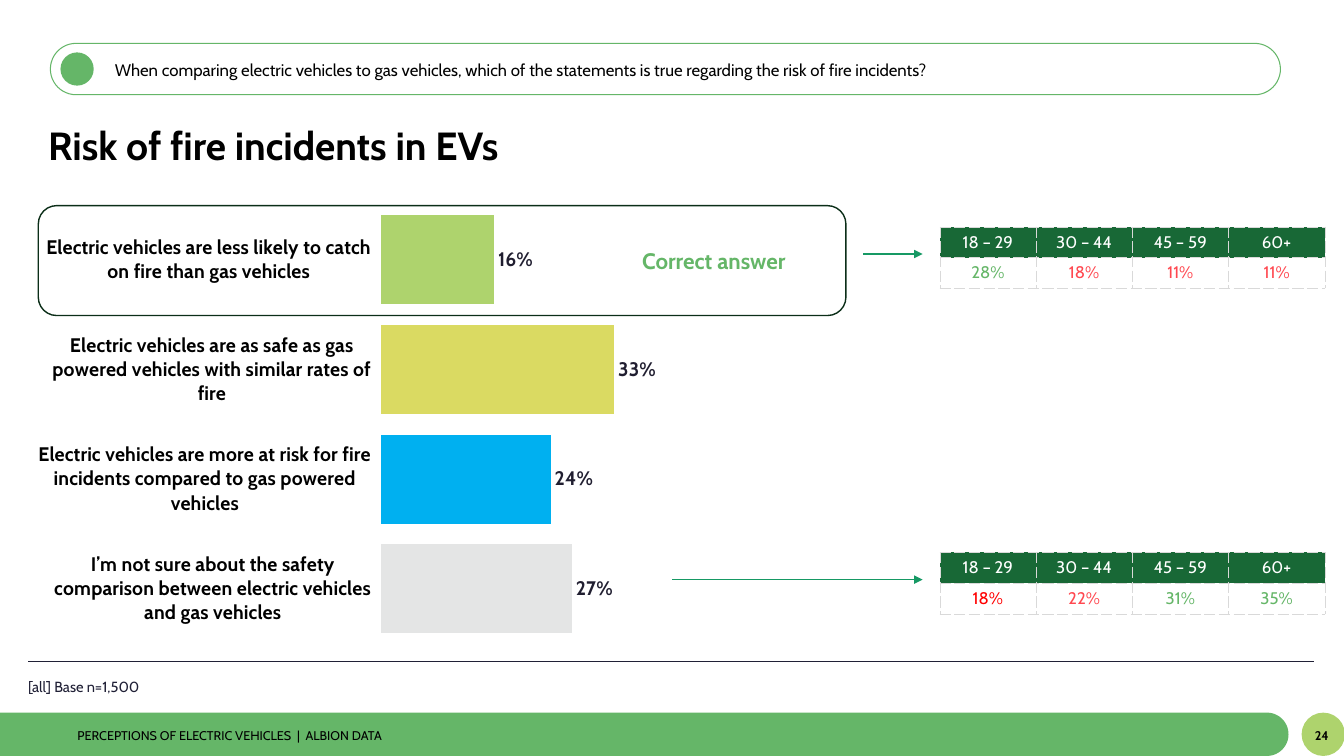
import math
from lxml import etree
from pptx import Presentation
from pptx.chart import data
from pptx.dml.color import RGBColor
from pptx.enum import chart as ce, dml, shapes, text
from pptx.oxml import ns, parse_xml
from pptx.util import Inches, Pt

FONT = "Cabin"
HEX = {
    "black": "000000", "white": "FFFFFF", "green": "65B668", "lime": "AED36D",
    "yellow": "DADA62", "blue": "00B0F0", "gray": "E4E5E5", "navy": "202036",
    "ink": "201E30", "forest": "186836", "pine": "0B2E18", "teal": "169964",
    "coral": "FF4850", "red": "FF0000", "border": "D9D9D9",
}
BARS = [
    ("Electric vehicles are less likely to catch on fire than gas vehicles", 0.16, "lime"),
    ("Electric vehicles are as safe as gas powered vehicles with similar rates of fire", 0.33, "yellow"),
    ("Electric vehicles are more at risk for fire incidents compared to gas powered vehicles", 0.24, "blue"),
    ("I’m not sure about the safety comparison between electric vehicles and gas vehicles", 0.27, "gray"),
]
AGES = ["18 – 29", "30 – 44", "45 – 59", "60+"]
LESS = [("28%", "green"), ("18%", "coral"), ("11%", "coral"), ("11%", "coral")]
UNSURE = [("18%", "red"), ("22%", "coral"), ("31%", "green"), ("35%", "green")]


def rgb(name):
    return RGBColor.from_string(HEX[name])


def style(font, size, color, bold=False):
    font.name = FONT
    font.size = Pt(size)
    font.bold = bold
    font.color.rgb = rgb(color)


def paint(shape, fill=None, line=None, width=1):
    shape.shadow.inherit = False
    if fill:
        shape.fill.solid()
        shape.fill.fore_color.rgb = rgb(fill)
    else:
        shape.fill.background()
    if line:
        shape.line.color.rgb = rgb(line)
        shape.line.width = Pt(width)
    else:
        shape.line.fill.background()


def add_shape(slide, kind, box, **look):
    shape = slide.shapes.add_shape(kind, *map(Inches, box))
    paint(shape, **look)
    return shape


def add_text(slide, words, box, size, color="black", bold=False, center=False):
    frame = slide.shapes.add_textbox(*map(Inches, box)).text_frame
    frame.word_wrap = True
    frame.vertical_anchor = text.MSO_ANCHOR.MIDDLE
    frame.margin_top = frame.margin_bottom = 0
    para = frame.paragraphs[0]
    para.text = words
    para.alignment = text.PP_ALIGN.CENTER if center else text.PP_ALIGN.LEFT
    style(para.font, size, color, bold)


def add_line(slide, left, right, y, color, width, arrow=False):
    line = slide.shapes.add_connector(
        shapes.MSO_CONNECTOR.STRAIGHT, Inches(left), Inches(y), Inches(right), Inches(y))
    line.line.color.rgb = rgb(color)
    line.line.width = Pt(width)
    props = line._element.spPr
    if arrow:
        etree.SubElement(props.find(ns.qn("a:ln")), ns.qn("a:tailEnd"), type="triangle")
    etree.SubElement(props, ns.qn("a:effectLst"))


def add_band(slide, right, top, height):
    radius = height / 2
    turns = [math.radians(step) for step in range(-90, 91, 5)]
    arc = [(Inches(right - radius + radius * math.cos(turn)),
            Inches(top + radius + radius * math.sin(turn))) for turn in turns]
    form = slide.shapes.build_freeform(0, Inches(top))
    form.add_line_segments(arc + [(0, Inches(top + height))])
    paint(form.convert_to_shape(), "green")


def add_edges(cell):
    props = cell._tc.get_or_add_tcPr()
    for spot, side in enumerate(("lnL", "lnR", "lnT", "lnB")):
        props.insert(spot, parse_xml(
            f'<a:{side} {ns.nsdecls("a")} w="3175"><a:solidFill>'
            f'<a:srgbClr val="{HEX["border"]}"/></a:solidFill>'
            f'<a:prstDash val="lgDash"/></a:{side}>'))


def add_ages(slide, top, shares):
    rows = [[(age, "white") for age in AGES], shares]
    box = map(Inches, (9.32, top, 3.82, 0.61))
    table = slide.shapes.add_table(len(rows), len(AGES), *box).table
    table.first_row = table.horz_banding = False
    for r, row in enumerate(rows):
        for c, (words, color) in enumerate(row):
            cell = table.cell(r, c)
            cell.margin_left = cell.margin_right = cell.margin_top = cell.margin_bottom = 0
            cell.vertical_anchor = text.MSO_ANCHOR.MIDDLE
            if r == 0:
                cell.fill.solid()
                cell.fill.fore_color.rgb = rgb("forest")
            else:
                cell.fill.background()
            add_edges(cell)
            para = cell.text_frame.paragraphs[0]
            para.text = words
            para.alignment = text.PP_ALIGN.CENTER
            style(para.font, 12, color)


def set_plot(chart, x, y, w, h):
    area = chart._chartSpace.chart.plotArea
    for old in area.findall(ns.qn("c:layout")):
        area.remove(old)
    sizes = "".join(f'<c:{key} val="{val}"/>' for key, val in zip("xywh", (x, y, w, h)))
    area.insert(0, parse_xml(
        f'<c:layout {ns.nsdecls("c")}><c:manualLayout><c:layoutTarget val="inner"/>'
        f'<c:xMode val="edge"/><c:yMode val="edge"/>{sizes}</c:manualLayout></c:layout>'))


def add_bars(slide):
    stats = data.CategoryChartData(number_format="0%")
    stats.categories = [name for name, _, _ in BARS]
    stats.add_series("Series 1", [share for _, share, _ in BARS])
    box = map(Inches, (0.38, 1.88, 10.56, 4.66))
    chart = slide.shapes.add_chart(ce.XL_CHART_TYPE.BAR_CLUSTERED, *box, stats).chart
    chart.has_legend = chart.has_title = False
    style(chart.font, 16, "black", True)

    axis = chart.category_axis
    axis.reverse_order = True
    axis.format.line.fill.background()
    style(axis.tick_labels.font, 14, "black", True)
    scale = chart.value_axis
    scale.minimum_scale, scale.maximum_scale = 0, 1
    scale.has_major_gridlines = False
    scale.visible = False

    plot = chart.plots[0]
    plot.gap_width = 23
    plot.vary_by_categories = False
    plot.has_data_labels = True
    labels = plot.data_labels
    labels.show_value = True
    labels.number_format = "0%"
    labels.number_format_is_linked = False
    labels.position = ce.XL_LABEL_POSITION.OUTSIDE_END
    style(labels.font, 14, "ink", True)
    for spot, (_, _, color) in enumerate(BARS):
        fill = plot.series[0].points[spot].format.fill
        fill.solid()
        fill.fore_color.rgb = rgb(color)
    set_plot(chart, 0.316, 0.033, 0.669, 0.934)


def main():
    deck = Presentation()
    deck.slide_width, deck.slide_height = Inches(13.33), Inches(7.5)
    slide = deck.slides.add_slide(deck.slide_layouts[6])
    kind = shapes.MSO_SHAPE

    add_band(slide, 12.78, 7.07, 0.43)
    add_shape(slide, kind.OVAL, (12.91, 7.07, 0.43, 0.43), fill="lime")
    add_text(slide, "24", (12.83, 7.08, 0.56, 0.43), 9, bold=True, center=True)
    add_text(slide, "PERCEPTIONS OF ELECTRIC VEHICLES  |  ALBION DATA", (0.67, 7.19, 9.57, 0.21), 9)

    pill = add_shape(slide, kind.ROUNDED_RECTANGLE, (0.5, 0.43, 12.2, 0.51), line="green", width=0.75)
    pill.adjustments[0] = 0.5
    add_shape(slide, kind.OVAL, (0.6, 0.52, 0.33, 0.33), fill="green")
    add_text(slide, "When comparing electric vehicles to gas vehicles, which of the statements "
             "is true regarding the risk of fire incidents?", (1.04, 0.54, 11.54, 0.3), 12)
    add_text(slide, "Risk of fire incidents in EVs", (0.38, 1.14, 12.2, 0.6), 28, bold=True)
    add_line(slide, 0.28, 13.03, 6.56, "navy", 0.5)
    add_text(slide, "[all] Base n=1,500", (0.18, 6.69, 10.56, 0.24), 10.5, "navy")

    add_bars(slide)
    add_text(slide, "Correct answer", (6.09, 2.4, 1.98, 0.37), 16, "green", True, True)
    add_shape(slide, kind.ROUNDED_RECTANGLE, (0.38, 2.04, 8.01, 1.09), line="pine")
    for top, start, shares in ((2.25, 8.56, LESS), (5.48, 6.67, UNSURE)):
        add_ages(slide, top, shares)
        add_line(slide, start, 9.15, top + 0.27, "teal", 1, arrow=True)
    deck.save("out.pptx")


if __name__ == "__main__":
    main()
